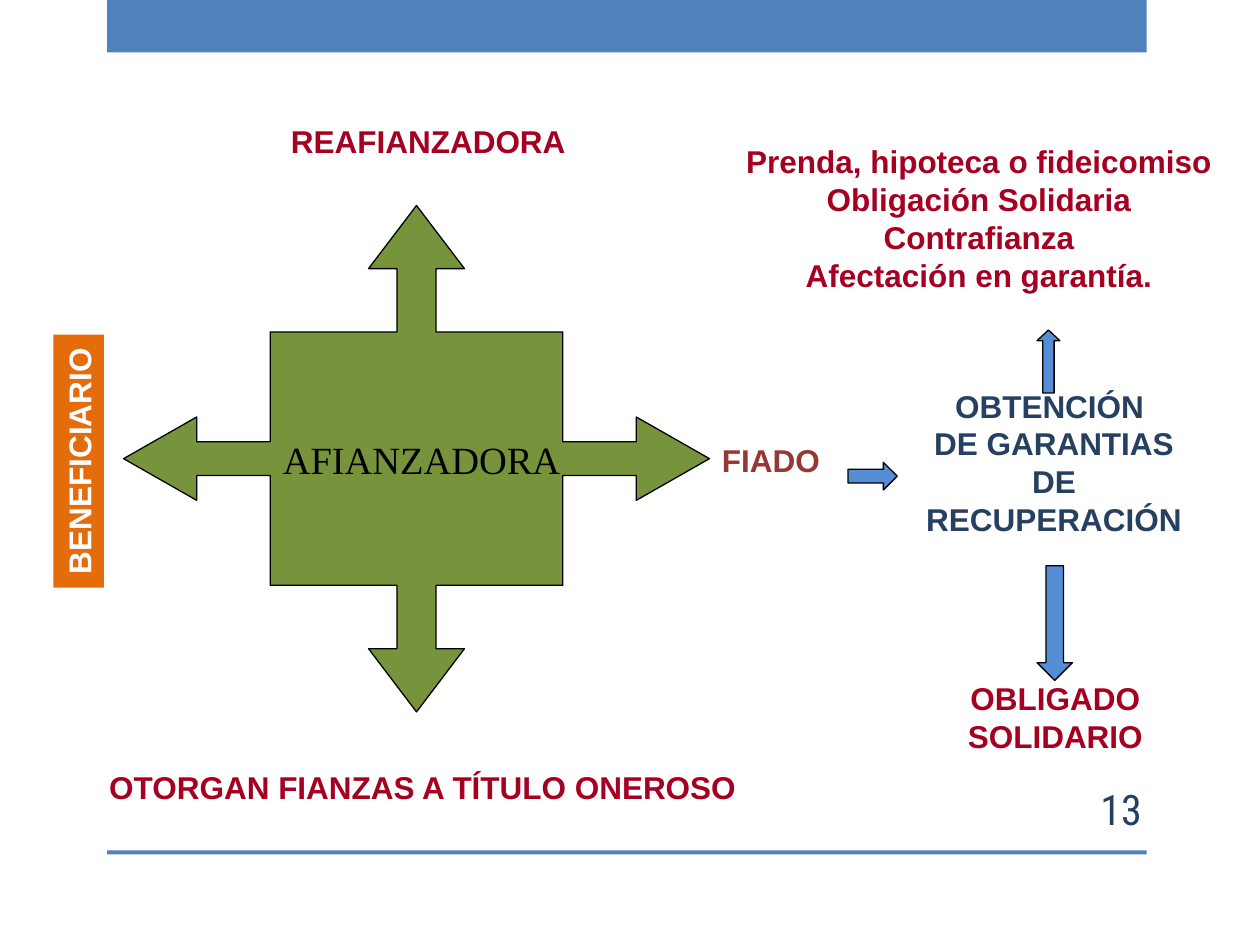
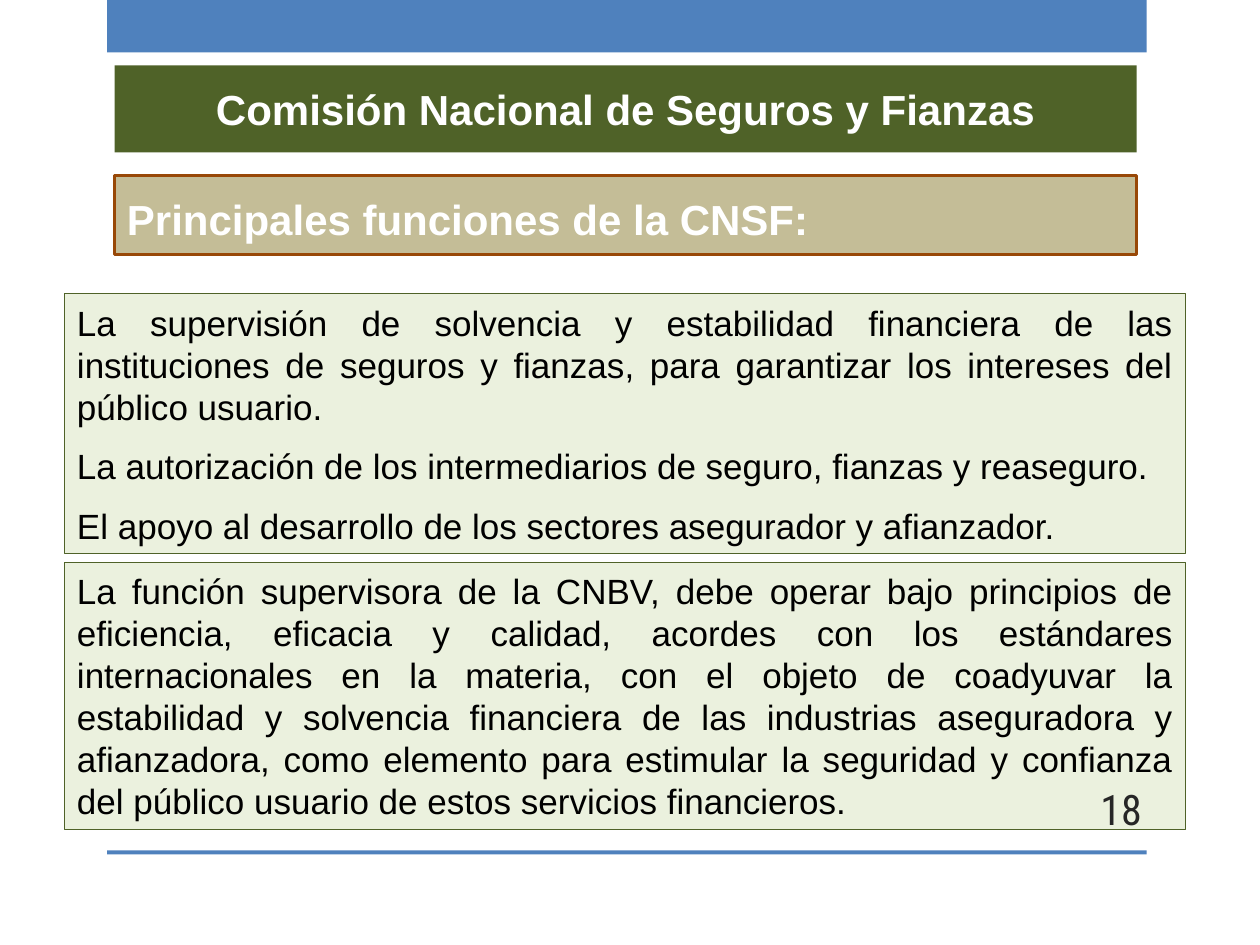
from pptx import Presentation
from pptx.dml.color import RGBColor
from pptx.enum.shapes import MSO_SHAPE
from pptx.enum.text import MSO_ANCHOR, PP_ALIGN
from pptx.util import Pt

RECT = MSO_SHAPE.RECTANGLE
RIGHT, UP, DOWN = MSO_SHAPE.RIGHT_ARROW, MSO_SHAPE.UP_ARROW, MSO_SHAPE.DOWN_ARROW
TOP, MIDDLE, BOTTOM = MSO_ANCHOR.TOP, MSO_ANCHOR.MIDDLE, MSO_ANCHOR.BOTTOM
ALIGN_LEFT, CENTER = PP_ALIGN.LEFT, PP_ALIGN.CENTER
ALIGN_RIGHT, JUSTIFY = PP_ALIGN.RIGHT, PP_ALIGN.JUSTIFY

BLUE, ARROW_BLUE, NAVY = "4F81BD", "558ED5", "254061"
GREEN, DARK_GREEN, PALE_GREEN = "77933C", "4F6228", "EBF1DE"
ORANGE, TAN, BROWN = "E46C0A", "C4BD97", "984807"
CRIMSON, BRICK = "A50021", "953735"
WHITE, BLACK, CHARCOAL = "FFFFFF", "000000", "262626"

LABEL = {"name": "Arial", "size": Pt(18), "bold": True}
HEADING = {"name": "Arial", "size": Pt(24), "bold": True}
BODY = {"name": "Arial", "size": Pt(20), "bold": False}
CORE = {"name": "Times New Roman", "size": Pt(22), "bold": False}
NUMBER = {"name": "Roboto Condensed", "size": Pt(24), "bold": False}


def paint(shape, fill=None, line=None, width=0.75):
    shape.shadow.inherit = False
    for part, color in ((shape.fill, fill), (shape.line.fill, line)):
        if color:
            part.solid()
            part.fore_color.rgb = RGBColor.from_string(color)
        else:
            part.background()
    if line:
        shape.line.width = Pt(width)


def write(shape, lines, font, color, align=CENTER, anchor=TOP, wrap=True, spacing=None):
    frame = shape.text_frame
    frame.word_wrap, frame.vertical_anchor = wrap, anchor
    for index, line in enumerate(lines):
        paragraph = frame.add_paragraph() if index else frame.paragraphs[0]
        for key, value in {"alignment": align, **(spacing or {})}.items():
            setattr(paragraph, key, value)
        run = paragraph.add_run()
        run.text = line
        for key, value in font.items():
            setattr(run.font, key, value)
        run.font.color.rgb = RGBColor.from_string(color)


deck = Presentation()
deck.slide_width, deck.slide_height = Pt(720), Pt(540)
guarantee_slide, commission_slide = [
    deck.slides.add_slide(deck.slide_layouts[6]) for _ in range(2)]

# Bands shared by both slides
for slide in (guarantee_slide, commission_slide):
    for top, height in ((0, 30), (486, 2.2)):
        band = slide.shapes.add_shape(RECT, Pt(61.2), Pt(top), Pt(594), Pt(height))
        paint(band, BLUE)

# Slide 1: parties around the guarantor
parties = [
    (["BENEFICIARIO"], (-27.4, 249.1, 144.7, 28.8), ORANGE, WHITE, CENTER, BOTTOM, False, 270),
    (["REAFIANZADORA"], (158.4, 66.2, 172.8, 28.8), WHITE, CRIMSON, CENTER, TOP, False, 0),
    (["OTORGAN FIANZAS A TÍTULO ONEROSO"], (53.3, 435.6, 376.6, 28.8),
     WHITE, CRIMSON, CENTER, TOP, False, 0),
    (["FIADO"], (405.4, 248.4, 71.3, 28.8), WHITE, BRICK, ALIGN_LEFT, TOP, False, 0),
    (["OBTENCIÓN ", "DE GARANTIAS", "DE RECUPERACIÓN"], (518.4, 217.4, 167.8, 94.3),
     WHITE, NAVY, CENTER, TOP, True, 0),
    (["Prenda, hipoteca o fideicomiso", "Obligación Solidaria", "Contrafianza",
      "Afectación en garantía."], (418.3, 77.8, 282.2, 94.3),
     WHITE, CRIMSON, CENTER, TOP, True, 0),
    (["OBLIGADO", "SOLIDARIO"], (545.8, 384.5, 114.5, 51.1),
     WHITE, CRIMSON, CENTER, TOP, False, 0),
]
for lines, bounds, fill, color, align, anchor, wrap, rotation in parties:
    party = guarantee_slide.shapes.add_shape(RECT, *map(Pt, bounds))
    party.rotation = rotation
    paint(party, fill)
    write(party, lines, LABEL, color, align, anchor, wrap)

# Four-way arrow: one quadrant, from top tip to right tip, mirrored about the centre
center_x, center_y = 238, 262.1
tip_x, body_x = 167.4, 83.6
quadrant = [(0, -144.7), (27.4, -108.6), (11.2, -108.6), (11.2, -72.4), (body_x, -72.4),
            (body_x, -9.6), (125.6, -9.6), (125.6, -23.8), (tip_x, 0)]
outline = []
for side_x, side_y, step in ((1, 1, 1), (1, -1, -1), (-1, -1, 1), (-1, 1, -1)):
    outline += [(Pt(center_x + side_x * x), Pt(center_y + side_y * y))
                for x, y in quadrant[::step][:-1]]
builder = guarantee_slide.shapes.build_freeform(*outline[0], scale=1.0)
builder.add_line_segments(outline[1:], close=True)
guarantor = builder.convert_to_shape()
paint(guarantor, GREEN, BLACK)
write(guarantor, ["AFIANZADORA"], CORE, BLACK, ALIGN_LEFT, MIDDLE, False)
# The label starts just inside the central body
guarantor.text_frame.margin_left = Pt(tip_x - body_x + 7.2)

# Arrows to and from the recovery guarantees
for direction, bounds, head in (
        (RIGHT, (484.6, 264.2, 28.1, 15.8), 0.5),
        (UP, (592.6, 188.6, 13, 36), 0.47),
        (DOWN, (592.6, 323.3, 20.2, 65.5), 0.5)):
    flow = guarantee_slide.shapes.add_shape(direction, *map(Pt, bounds))
    flow.adjustments[0], flow.adjustments[1] = 0.5, head
    paint(flow, ARROW_BLUE, BLACK)

# Slide 2: the commission and its functions
duties = [
    "La supervisión de solvencia y estabilidad financiera de las instituciones de seguros "
    "y fianzas, para garantizar los intereses del público usuario.",
    "La autorización de los intermediarios de seguro, fianzas y reaseguro.",
    "El apoyo al desarrollo de los sectores asegurador y afianzador.",
]
principles = [
    "La función supervisora de la CNBV, debe operar bajo principios de eficiencia, eficacia "
    "y calidad, acordes con los estándares internacionales en la materia, con el objeto de "
    "coadyuvar la estabilidad y solvencia financiera de las industrias aseguradora y "
    "afianzadora, como elemento para estimular la seguridad y confianza del público usuario "
    "de estos servicios financieros."
]
after = {"space_after": Pt(10)}
panels = [
    (["Comisión Nacional de Seguros y Fianzas"], (65.5, 37.4, 584, 49.7),
     (DARK_GREEN,), HEADING, WHITE, CENTER, {}),
    (["Principales funciones de la CNSF:"], (65.5, 100.1, 584, 45.4),
     (TAN, BROWN, 1.75), HEADING, WHITE, JUSTIFY, {"line_spacing": 1.15, **after}),
    (duties, (36.9, 167.8, 640.6, 148.5),
     (PALE_GREEN, DARK_GREEN), BODY, BLACK, JUSTIFY, after),
    (principles, (36.9, 321.3, 640.6, 152.6),
     (PALE_GREEN, DARK_GREEN), BODY, BLACK, JUSTIFY, {}),
]
for lines, bounds, colors, font, color, align, spacing in panels:
    panel = commission_slide.shapes.add_shape(RECT, *map(Pt, bounds))
    paint(panel, *colors)
    write(panel, lines, font, color, align, MIDDLE, spacing=spacing)

# Slide numbers
for slide, number, color in ((guarantee_slide, "13", NAVY), (commission_slide, "18", CHARCOAL)):
    page = slide.shapes.add_textbox(Pt(599.8), Pt(447.8), Pt(59.8), Pt(28.8))
    write(page, [number], NUMBER, color, ALIGN_RIGHT, MIDDLE)

deck.save("out.pptx")
